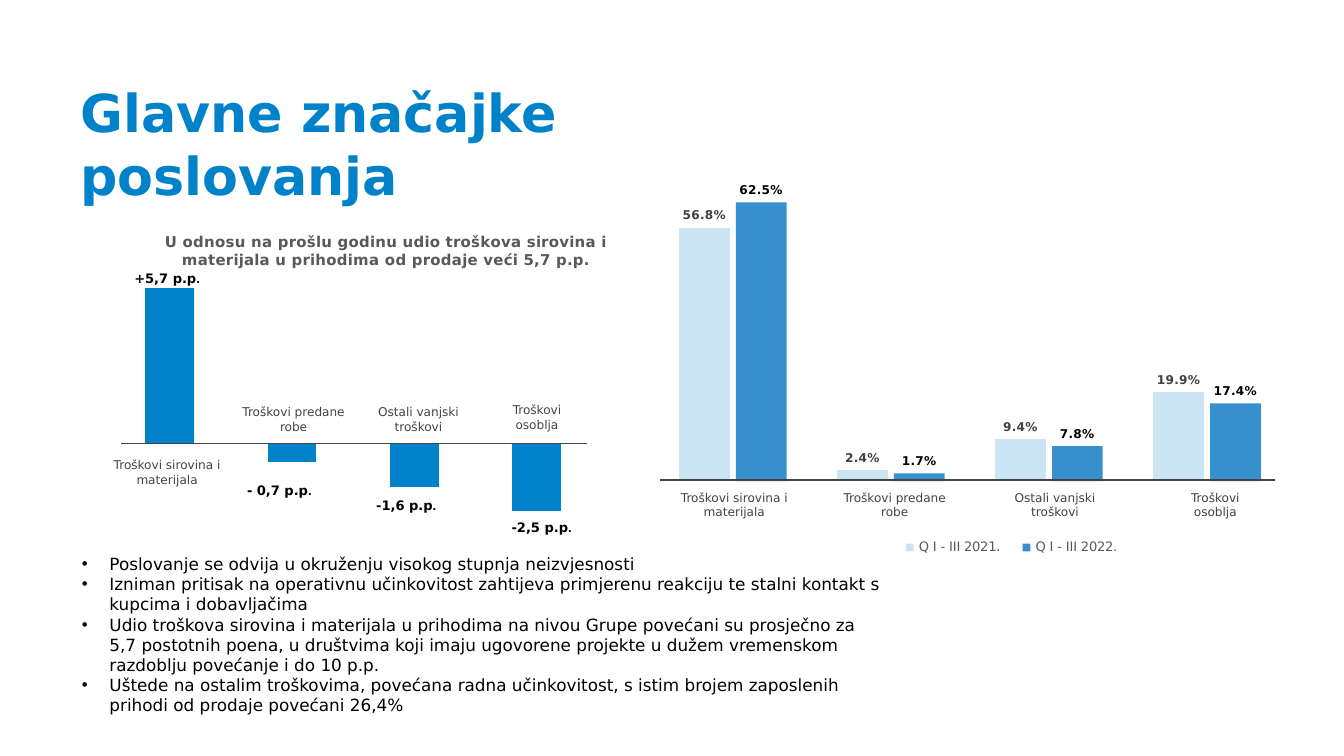
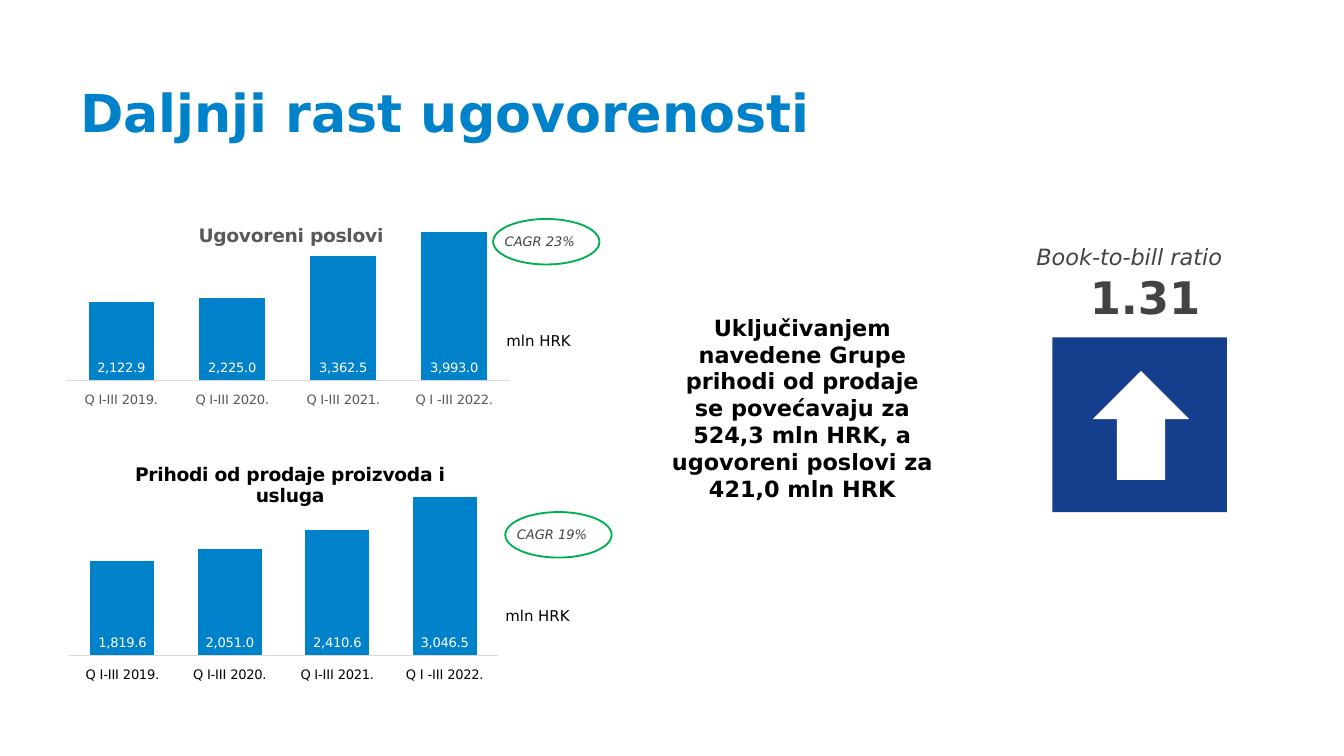
from lxml import etree
from pptx import Presentation
from pptx.chart.data import CategoryChartData
from pptx.dml.color import RGBColor
from pptx.enum.chart import XL_CHART_TYPE, XL_LABEL_POSITION, XL_LEGEND_POSITION, XL_TICK_LABEL_POSITION, XL_TICK_MARK
from pptx.enum.shapes import MSO_CONNECTOR, MSO_SHAPE
from pptx.enum.text import MSO_ANCHOR, MSO_AUTO_SIZE, PP_ALIGN
from pptx.oxml.ns import qn
from pptx.util import Cm, Pt

COLUMN = XL_CHART_TYPE.COLUMN_CLUSTERED
OUTER, BASE = XL_LABEL_POSITION.OUTSIDE_END, XL_LABEL_POSITION.INSIDE_BASE
TOP_KEY = XL_LEGEND_POSITION.TOP
LOW, NO_TICK = XL_TICK_LABEL_POSITION.LOW, XL_TICK_MARK.NONE
LINE = MSO_CONNECTOR.STRAIGHT
RECT, OVAL, ARROW = MSO_SHAPE.RECTANGLE, MSO_SHAPE.OVAL, MSO_SHAPE.UP_ARROW
TOP, MIDDLE = MSO_ANCHOR.TOP, MSO_ANCHOR.MIDDLE
FIT, FIXED = MSO_AUTO_SIZE.SHAPE_TO_FIT_TEXT, MSO_AUTO_SIZE.NONE
LEFT, CENTER = PP_ALIGN.LEFT, PP_ALIGN.CENTER

BLUE = RGBColor(0x00, 0x82, 0xCA)
PALE = RGBColor(0xCC, 0xE5, 0xF5)
MID = RGBColor(0x00, 0x70, 0xC0)
NAVY = RGBColor(0x15, 0x3E, 0x8D)
GREEN = RGBColor(0x00, 0xB0, 0x50)
BLACK = RGBColor(0, 0, 0)
WHITE = RGBColor(0xFF, 0xFF, 0xFF)
DARK = RGBColor(0x43, 0x43, 0x43)
COAL = RGBColor(0x40, 0x40, 0x40)
GRAY = RGBColor(0x59, 0x59, 0x59)
SILVER = RGBColor(0xD9, 0xD9, 0xD9)
FONT = "DejaVu Sans"

POINTS = [
    "Poslovanje se odvija u okruženju visokog stupnja neizvjesnosti",
    "Izniman pritisak na operativnu učinkovitost zahtijeva primjerenu reakciju te stalni kontakt s kupcima i dobavljačima",
    "Udio troškova sirovina i materijala u prihodima na nivou Grupe povećani su prosječno za 5,7 postotnih poena, "
    "u društvima koji imaju ugovorene projekte u dužem vremenskom razdoblju povećanje i do 10 p.p.",
    "Uštede na ostalim troškovima, povećana radna učinkovitost, s istim brojem zaposlenih prihodi od prodaje povećani 26,4%",
]
COSTS = [
    ["Troškovi sirovina i materijala"],
    ["Troškovi predane robe"],
    ["Ostali vanjski troškovi"],
    ["Troškovi", "osoblja"],
]
COST_AT = [(1.85, 8.53), (4.24, 7.52), (6.6, 7.52), (8.84, 7.49)]
SHARE_AT = [(12.57 + 3.03 * i, 9.14) for i in range(4)]
DELTAS = [
    ("+5,7 p.p", 2.29, 4.98),
    ("- 0,7 p.p", 4.42, 8.99),
    ("-1,6 p.p", 6.86, 9.27),
    ("-2,5 p.p", 9.42, 9.7),
]
AXES = [(2.29, 11.1, 8.38), (12.47, 24.1, 9.07)]
INDEX = ["1", "2", "3", "4"]
YEARS = ["Q I-III 2019.", "Q I-III 2020.", "Q I-III 2021.", "Q I -III 2022."]

CHANGE = dict(
    box=(0.81, 4.14, 10.74, 6.43), cats=INDEX, gap=150, low=-53, high=123,
    plot=(0.116, 0.099, 0.86, 0.802),
    title="U odnosu na prošlu godinu udio troškova sirovina i materijala u prihodima od prodaje veći 5,7 p.p.",
    head=dict(size=8, color=GRAY, at=(0.21, 0.03)),
    rows=[dict(name="Series 1", vals=[100, -12, -28, -44], fill=BLUE)],
)
SHARES = dict(
    box=(11.86, 2.72, 12.73, 7.95), cats=INDEX, gap=100, lap=-12, high=0.7,
    plot=(0.039, 0.06, 0.939, 0.742), form="0.0%", key=(0.385, 0.925, 0.37, 0.07),
    rows=[
        dict(name="Q I - III 2021.", vals=[0.568, 0.024, 0.094, 0.199], fill=PALE,
             label=dict(size=6.5, color=COAL, bold=True), spot=OUTER),
        dict(name="Q I - III 2022.", vals=[0.625, 0.017, 0.078, 0.174], fill=MID, alpha=78,
             label=dict(size=6.5, color=BLACK, bold=True), spot=OUTER),
    ],
)
BASE_ROW = dict(name="Series 1", fill=BLUE, label=dict(size=7, color=WHITE), spot=BASE)
SALES = [
    dict(
        box=(1.07, 3.1, 8.74, 4.6), cats=YEARS, gap=69, lap=-52, high=4500,
        plot=(0.02, 0.206, 0.96, 0.695), form="#,##0.0", axis=GRAY,
        title="Ugovoreni poslovi", head=dict(size=10, color=GRAY, at=(0.3, 0.235)),
        rows=[dict(BASE_ROW, vals=[2122.9, 2225, 3362.5, 3993])],
    ),
    dict(
        box=(0.99, 8.13, 8.81, 4.78), cats=YEARS, gap=68, lap=-52, high=3500,
        plot=(0.035, 0.171, 0.922, 0.72), form="#,##0.0", axis=BLACK,
        title="Prihodi od prodaje proizvoda i usluga",
        head=dict(size=10, color=BLACK, at=(0.17, 0.115)),
        rows=[dict(BASE_ROW, vals=[1819.6, 2051, 2410.6, 3046.5])],
    ),
]
GROWTH = [("CAGR 23%", 9.32, 4.14), ("CAGR 19%", 9.55, 9.68)]
UNITS = [(9.32, 6.15), (9.3, 11.35)]
NOTE = ("Uključivanjem navedene Grupe prihodi od prodaje se povećavaju za 524,3 mln HRK, "
        "a ugovoreni poslovi za 421,0 mln HRK")


def style(font, size=9, color=BLACK, bold=False, italic=False, face=FONT):
    font.name, font.size, font.bold, font.italic = face, Pt(size), bold, italic
    font.color.rgb = color


def write(frame, paras, align=LEFT, anchor=TOP, wrap=True, fit=FIT, bullet=False, **look):
    frame.word_wrap, frame.auto_size, frame.vertical_anchor = wrap, fit, anchor
    for i, runs in enumerate(paras):
        para = frame.add_paragraph() if i else frame.paragraphs[0]
        para.alignment = align
        if bullet:
            props = para._p.get_or_add_pPr()
            props.set("marL", str(Cm(0.52)))
            props.set("indent", str(-Cm(0.52)))
            etree.SubElement(props, qn("a:buFont")).set("typeface", "Arial")
            etree.SubElement(props, qn("a:buChar")).set("char", "•")
        for part in [runs] if isinstance(runs, str) else runs:
            words, extra = (part, {}) if isinstance(part, str) else part
            run = para.add_run()
            run.text = words
            style(run.font, **{**look, **extra})


def text(slide, box, paras, **look):
    shape = slide.shapes.add_textbox(*map(Cm, box))
    write(shape.text_frame, paras, **look)
    return shape


def block(slide, kind, box, fill=None, line=None):
    shape = slide.shapes.add_shape(kind, *map(Cm, box))
    shape.shadow.inherit = False
    if fill is None:
        shape.fill.background()
    else:
        shape.fill.solid()
        shape.fill.fore_color.rgb = fill
    if line is None:
        shape.line.fill.background()
    else:
        shape.line.color.rgb = line
        shape.line.width = Pt(1)
    return shape


def rule(slide, left, right, y):
    line = slide.shapes.add_connector(LINE, Cm(left), Cm(y), Cm(right), Cm(y))
    line.line.color.rgb = DARK
    line.line.width = Pt(0.75)
    etree.SubElement(line._element.spPr, qn("a:effectLst"))


def place(node, spot, inner=False):
    layout = node.find(qn("c:layout"))
    if layout is None:
        layout = etree.Element(qn("c:layout"))
        node.insert(0, layout)
    manual = etree.SubElement(layout, qn("c:manualLayout"))
    pairs = [("layoutTarget", "inner")] if inner else []
    pairs += [("xMode", "edge"), ("yMode", "edge"), *zip("xywh", spot)]
    for tag, val in pairs:
        etree.SubElement(manual, qn("c:" + tag)).set("val", str(val))


def graph(slide, box, cats, rows, gap, high, plot, low=0, lap=0, form="0.0%",
          axis=None, title=None, head=None, key=None):
    data = CategoryChartData(number_format=form)
    data.categories = cats
    for row in rows:
        data.add_series(row["name"], row["vals"])
    chart = slide.shapes.add_chart(COLUMN, *map(Cm, box), data).chart
    style(chart.font, size=8)
    chart.has_title = title is not None
    if title:
        look = dict(head)
        spot = look.pop("at")
        write(chart.chart_title.text_frame, [title], align=CENTER, bold=True, **look)
        chart.chart_title.include_in_layout = False
        place(chart.chart_title._element, spot)
    chart.has_legend = key is not None
    if key:
        chart.legend.position = TOP_KEY
        chart.legend.include_in_layout = False
        style(chart.legend.font, size=7, color=GRAY)
        place(chart.legend._element, key)
    vert, flat = chart.value_axis, chart.category_axis
    vert.minimum_scale, vert.maximum_scale = low, high
    vert.has_major_gridlines = vert.visible = False
    flat.visible = axis is not None
    if axis is not None:
        flat.major_tick_mark = NO_TICK
        flat.tick_label_position = LOW
        flat.format.line.color.rgb = SILVER
        flat.format.line.width = Pt(0.75)
        style(flat.tick_labels.font, size=7, color=axis)
    bars = chart.plots[0]
    bars.gap_width, bars.overlap, bars.vary_by_categories = gap, lap, False
    place(bars._element.getparent(), plot, inner=True)
    for bar, row in zip(bars.series, rows):
        bar.invert_if_negative = False
        bar.format.fill.solid()
        bar.format.fill.fore_color.rgb = row["fill"]
        if "alpha" in row:
            tint = next(bar._element.iter(qn("a:srgbClr")))
            etree.SubElement(tint, qn("a:alpha")).set("val", str(row["alpha"] * 1000))
        if "label" in row:
            tags = bar.data_labels
            style(tags.font, **row["label"])
            tags.number_format, tags.number_format_is_linked = form, False
            tags.position, tags.show_value = row["spot"], True


def page(deck, title):
    slide = deck.slides.add_slide(deck.slide_layouts[5])
    head = slide.shapes.title
    head.left, head.top, head.width, head.height = map(Cm, (1.27, 1.27, 14.55, 3.07))
    frame = head.text_frame
    frame.margin_left = frame.margin_right = frame.margin_top = frame.margin_bottom = Cm(0.25)
    write(frame, [title], fit=FIXED, size=28, color=BLUE, bold=True)
    return slide


def costs(deck):
    slide = page(deck, "Glavne značajke poslovanja")
    text(slide, (1.3, 10.34, 15.57, 3.33), POINTS, bullet=True)
    graph(slide, **CHANGE)
    graph(slide, **SHARES)
    for words, x, y in DELTAS:
        text(slide, (x, y, 1.75, 0.56), [[words, (".", dict(face="Arial"))]], wrap=False, size=7, bold=True)
    for spots in (COST_AT, SHARE_AT):
        for (x, y), words in zip(spots, COSTS):
            text(slide, (x, y, 2.62, 0.81), words, align=CENTER, size=6.5, color=DARK)
    for ends in AXES:
        rule(slide, *ends)


def orders(deck):
    slide = page(deck, "Daljnji rast ugovorenosti")
    ratio = text(slide, (16.66, 4.47, 9.37, 1.8),
                 [[("Book-to-bill ratio", dict(italic=True))], [("1.31", dict(size=24, bold=True))]],
                 align=CENTER, size=12, color=DARK)
    ratio.text_frame.paragraphs[1]._p.get_or_add_pPr().set("marL", str(Cm(0.59)))
    block(slide, RECT, (19.89, 6.38, 3.3, 3.3), fill=NAVY)
    block(slide, ARROW, (20.65, 7.01, 1.83, 2.06), fill=WHITE)
    note = block(slide, RECT, (12.37, 5.79, 5.59, 3.84), fill=WHITE)
    write(note.text_frame, [NOTE], align=CENTER, anchor=MIDDLE, size=12, bold=True)
    for chart in SALES:
        graph(slide, **chart)
    for words, x, y in GROWTH:
        block(slide, OVAL, (x, y, 2.01, 0.86), line=GREEN)
        text(slide, (x - 0.03, y + 0.15, 1.9, 0.56), [words], wrap=False, size=7, color=DARK, italic=True)
    for x, y in UNITS:
        text(slide, (x, y, 1.75, 0.61), ["mln HRK"], wrap=False, size=8)


def main():
    deck = Presentation()
    deck.slide_width, deck.slide_height = Cm(25.4), Cm(14.29)
    costs(deck)
    orders(deck)
    deck.save("out.pptx")


if __name__ == "__main__":
    main()
